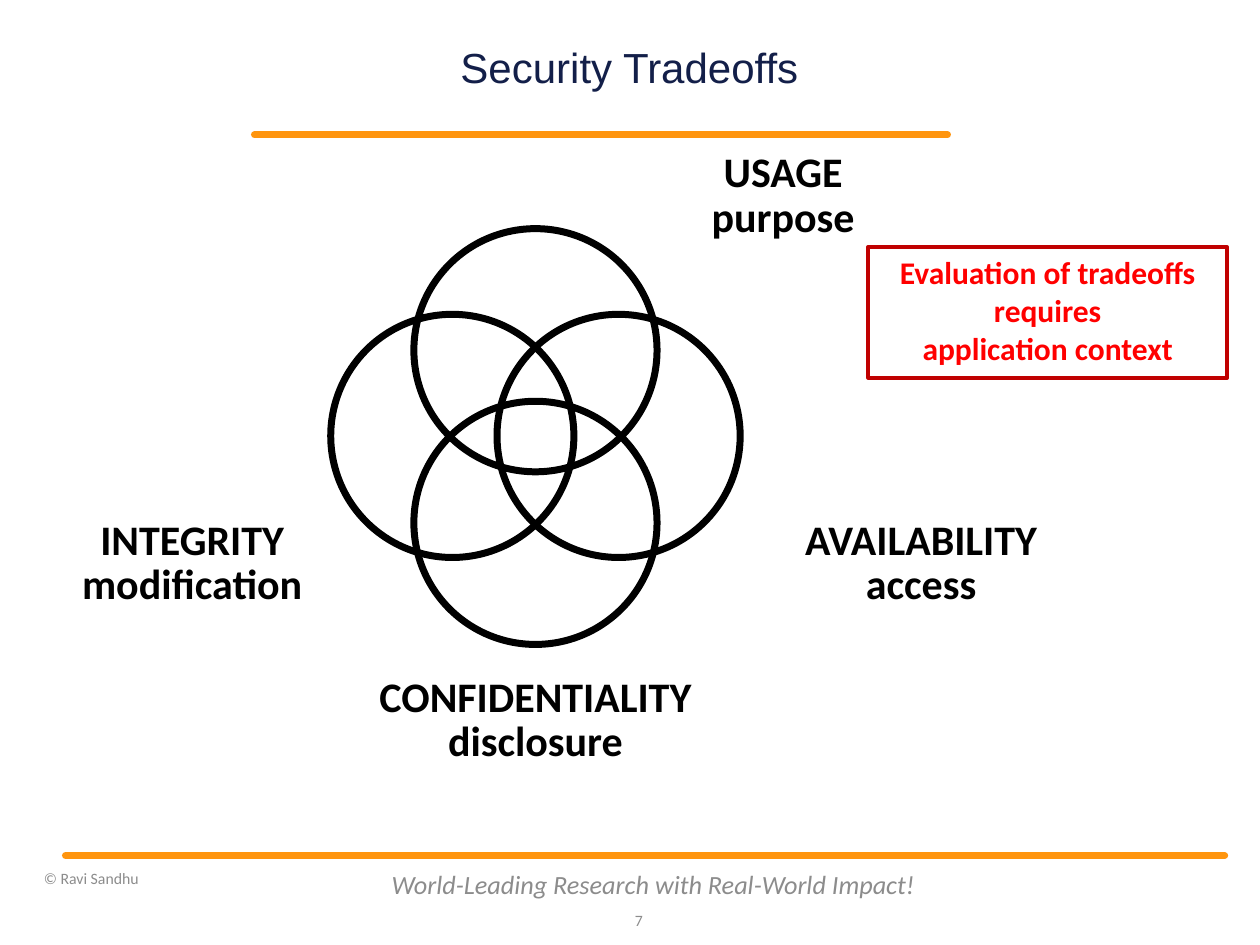
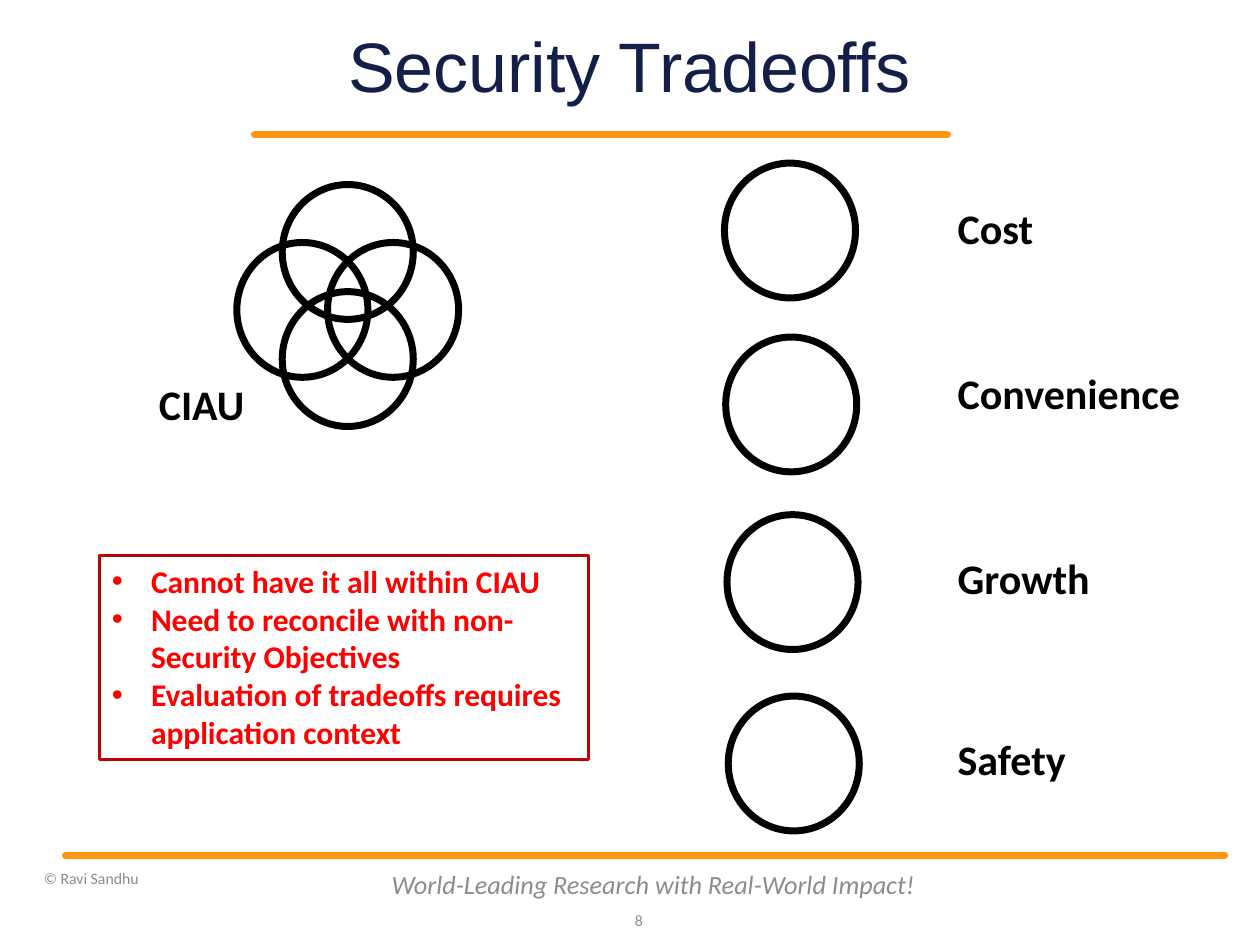
from lxml import etree
from pptx import Presentation
from pptx.dml.color import RGBColor
from pptx.enum import shapes, text
from pptx.oxml import ns
from pptx.util import Inches, Pt

COLORS = {"navy": "131F49", "orange": "FF950E", "gray": "8C8C8C",
          "black": "000000", "red": "FF0000", "border": "C00000"}
LEFT, CENTER, RIGHT = text.PP_ALIGN.LEFT, text.PP_ALIGN.CENTER, text.PP_ALIGN.RIGHT
TOP, MIDDLE = text.MSO_ANCHOR.TOP, text.MSO_ANCHOR.MIDDLE
NORMAL_INSETS, TIGHT_INSETS = (0.1, 0.05), (0.07, 0.03)
FIRST_PAGE = 7


def rgb(name):
    return RGBColor.from_string(COLORS[name])


def place(sp, left, top, width, height):
    sp.left, sp.top = Inches(left), Inches(top)
    sp.width, sp.height = Inches(width), Inches(height)


def add_bullet(p, indent=0.31):
    pPr = p._p.get_or_add_pPr()
    pPr.set("marL", str(Inches(indent)))
    pPr.set("indent", str(-Inches(indent)))
    etree.SubElement(pPr, ns.qn("a:buFont"), typeface="Arial")
    etree.SubElement(pPr, ns.qn("a:buChar"), char="•")


def write(sp, lines, size, color, font="Calibri", bold=False, italic=False,
          align=LEFT, anchor=TOP, insets=NORMAL_INSETS, spacing=None,
          wrap=True, bullets=False):
    tf = sp.text_frame
    tf.word_wrap = wrap
    tf.auto_size = text.MSO_AUTO_SIZE.NONE
    tf.vertical_anchor = anchor
    tf.margin_left = tf.margin_right = Inches(insets[0])
    tf.margin_top = tf.margin_bottom = Inches(insets[1])
    for i, line in enumerate(lines):
        p = tf.add_paragraph() if i else tf.paragraphs[0]
        p.alignment = align
        if spacing:
            p.line_spacing = spacing
        if bullets:
            add_bullet(p)
        r = p.add_run()
        r.text = line
        r.font.name, r.font.size = font, Pt(size)
        r.font.bold, r.font.italic = bold, italic
        r.font.color.rgb = rgb(color)


def add_text(slide, box, lines, size, color, **style):
    sp = slide.shapes.add_textbox(*map(Inches, box))
    write(sp, lines, size, color, **style)


def add_label(slide, box, *lines, align=CENTER, insets=TIGHT_INSETS, spacing=0.87):
    add_text(slide, box, lines, 24, "black", bold=True, align=align,
             insets=insets, spacing=spacing, wrap=False)


def add_outline(slide, kind, box, color, width):
    """Add an unfilled preset shape."""
    sp = slide.shapes.add_shape(kind, *map(Inches, box))
    sp.shadow.inherit = False
    sp.fill.background()
    sp.line.color.rgb = rgb(color)
    sp.line.width = Pt(width)
    return sp


def add_circle(slide, cx, cy, width, height):
    add_outline(slide, shapes.MSO_SHAPE.OVAL,
                (cx - width / 2, cy - height / 2, width, height), "black", 4)


def add_venn(slide, cx, cy, width, height, side, up, down):
    """Four overlapping circles, offset from a common center."""
    for dx, dy in ((side, 0), (-side, 0), (0, down), (0, -up)):
        add_circle(slide, cx + dx, cy + dy, width, height)


def add_note(slide, box, lines, **style):
    sp = add_outline(slide, shapes.MSO_SHAPE.RECTANGLE, box, "border", 2)
    write(sp, lines, 18, "red", bold=True, **style)


def add_rule(slide, left, right, y):
    line = slide.shapes.add_connector(shapes.MSO_CONNECTOR.STRAIGHT,
                                      *map(Inches, (left, y, right, y)))
    line.line.color.rgb = rgb("orange")
    line.line.width = Pt(4)
    line.line._get_or_add_ln().set("cap", "rnd")
    etree.SubElement(line._element.spPr, ns.qn("a:effectLst"))


def add_slide(prs, title, title_size):
    """Add a slide with its title, rules and footer."""
    slide = prs.slides.add_slide(prs.slide_layouts[5])
    place(slide.shapes.title, 2.37, 0.3, 5.25, 0.51)
    write(slide.shapes.title, [title], title_size, "navy", font="Arial",
          align=CENTER, anchor=MIDDLE, insets=(0, 0), spacing=0.9)
    add_rule(slide, 2.02, 7.52, 1.07)
    add_rule(slide, 0.52, 9.72, 6.79)
    page = FIRST_PAGE + len(prs.slides) - 1
    add_text(slide, (3, 6.82, 4.37, 0.4),
             ["World-Leading Research with Real-World Impact!"], 15, "gray",
             italic=True, align=CENTER, anchor=MIDDLE)
    add_text(slide, (4.8, 7.1, 0.4, 0.4), [str(page)], 9, "gray",
             align=RIGHT, anchor=MIDDLE)
    add_text(slide, (0.25, 6.79, 2.75, 0.36), ["© Ravi Sandhu"], 9, "gray",
             anchor=MIDDLE)
    return slide


def build_security_objectives(prs):
    slide = add_slide(prs, "Security Tradeoffs", 24)
    add_venn(slide, 4.25, 3.46, 1.93, 1.93, side=0.66, up=0.68, down=0.69)
    add_label(slide, (0.5, 4.1, 2.05, 0.75), "INTEGRITY", "modification")
    add_label(slide, (6, 4.1, 2.62, 0.75), "AVAILABILITY", "access")
    add_label(slide, (2.59, 5.35, 3.32, 0.75), "CONFIDENTIALITY", "disclosure")
    add_label(slide, (5.54, 1.15, 1.35, 0.82), "USAGE", "purpose",
              insets=NORMAL_INSETS, spacing=0.9)
    add_note(slide, (6.89, 1.96, 2.85, 1.04),
             ["Evaluation of tradeoffs requires", "application context"],
             align=CENTER)


def build_other_objectives(prs):
    slide = add_slide(prs, "Security Tradeoffs", 40)
    width, height = 1.04, 1.07
    add_note(slide, (0.79, 4.41, 3.88, 1.62),
             ["Cannot have it all within CIAU",
              "Need to reconcile with non-Security Objectives",
              "Evaluation of tradeoffs requires application context"],
             bullets=True)
    add_venn(slide, 2.76, 2.46, width, height, side=0.36, up=0.46, down=0.39)
    add_label(slide, (1.19, 3.03, 0.82, 0.41), "CIAU")
    objectives = (("Cost", 1.83, 1.63, 0.89), ("Convenience", 3.21, 2.94, 2.23),
                  ("Growth", 4.62, 4.41, 1.31), ("Safety", 6.06, 5.85, 1.15))
    for i, (name, circle_y, label_top, label_width) in enumerate(objectives):
        add_circle(slide, 6.27 + 0.01 * i, circle_y, width, height)
        add_label(slide, (7.53, label_top, label_width, 0.41), name, align=LEFT)


def main():
    prs = Presentation()
    prs.slide_width, prs.slide_height = Inches(10), Inches(7.5)
    build_security_objectives(prs)
    build_other_objectives(prs)
    prs.save("out.pptx")


if __name__ == "__main__":
    main()
